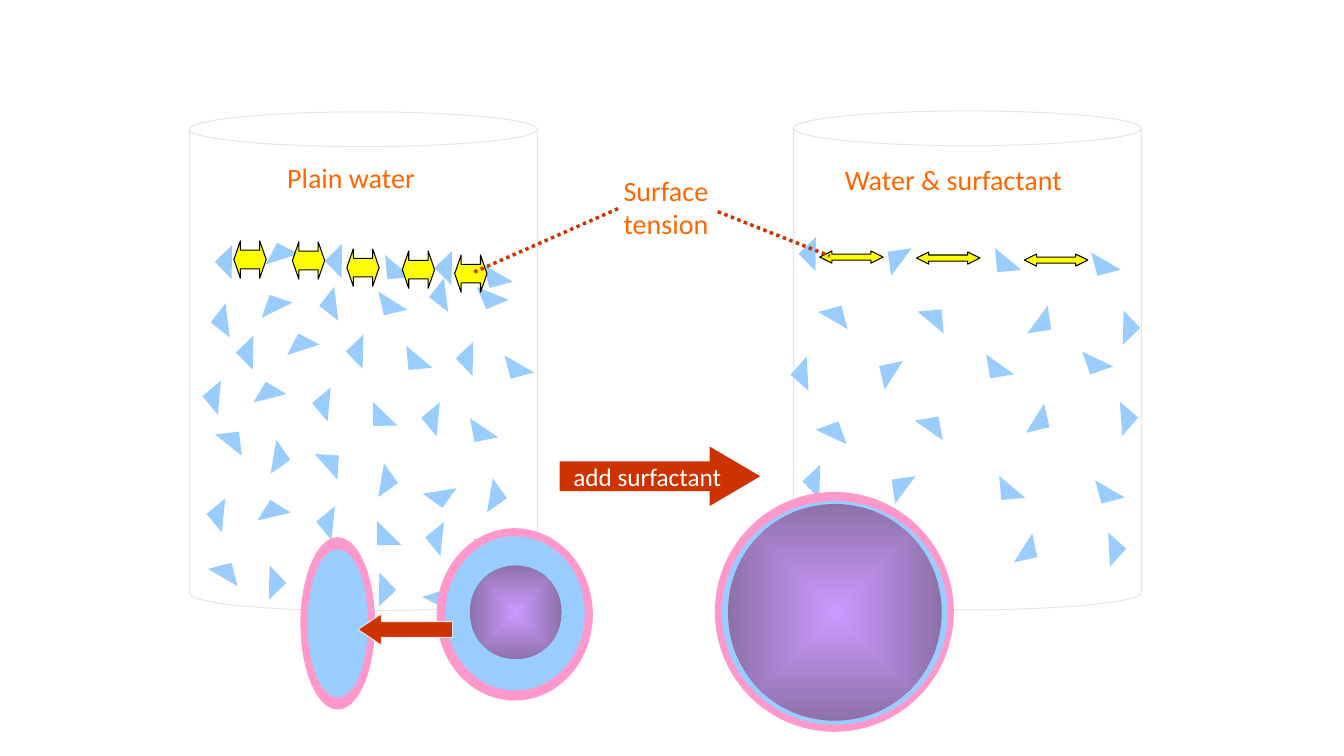
from math import cos, radians, sin

from lxml import etree
from pptx import Presentation
from pptx.dml.color import RGBColor
from pptx.enum.dml import MSO_LINE
from pptx.enum.shapes import MSO_CONNECTOR, MSO_SHAPE
from pptx.enum.text import MSO_ANCHOR, PP_ALIGN
from pptx.oxml.ns import qn
from pptx.util import Inches, Pt

CAN = MSO_SHAPE.CAN
WEDGE = MSO_SHAPE.RIGHT_TRIANGLE
BOTH = MSO_SHAPE.LEFT_RIGHT_ARROW
RIGHT = MSO_SHAPE.RIGHT_ARROW
LEFT = MSO_SHAPE.LEFT_ARROW
OVAL = MSO_SHAPE.OVAL
STRAIGHT = MSO_CONNECTOR.STRAIGHT
DOTS = MSO_LINE.ROUND_DOT
MIDDLE = MSO_ANCHOR.MIDDLE
CENTER = PP_ALIGN.CENTER
START = PP_ALIGN.LEFT

PINK, BLUE, RED = "FF99CC", "99CCFF", "CC3300"
ORANGE, YELLOW, GREY = "FF6600", "FFFF00", "E7E6E6"
BLACK, WHITE = "000000", "FFFFFF"
CORE = ("CC99FF", "8D71A9")
SIDE = 0.24

PLAIN = {
    "label": ("Plain water", 0.87, 0.43, 1.48),
    "row": [(-1.32, -0.04, 46.2), (-0.82, -0.07, 117), (-0.23, -0.05, 46.2),
            (0.33, 0, 354.9), (0.86, 0.02, 46.2), (1.32, 0.07, 345.1)],
    "turns": [(1.74, 1.53, 0), (1.69, 1.92, -8.2), (1.61, 2.97, 4.1),
              (1.95, 2.43, 0), (1.68, 3.57, 188.5), (1.65, 4.15, 4.6),
              (1.65, 4.69, 180)],
    "pulls": [(0.44, 1.28), (1.02, 1.29), (1.56, 1.36), (2.63, 1.42), (2.11, 1.38)],
    "pull": (0.32, 0.37, 0.2),
}
MIXED = {
    "label": ("Water & surfactant", 0.41, 0.46, 2.38),
    "row": [(-1.44, -0.05, 46.2), (-0.59, 0.03, 81.7), (0.47, 0, 354.9),
            (1.44, 0.02, 345.1)],
    "turns": [(1.66, 1.47, 0), (1.83, 2.1, 180), (1.58, 2.55, -4.3),
              (1.81, 3.13, 175), (1.7, 3.73, 0), (1.69, 4.41, 175.7)],
    "pulls": [(0.26, 1.39), (1.22, 1.4), (2.29, 1.42)],
    "pull": (0.63, 0.12, 1.01),
}


def color(code):
    return RGBColor.from_string(code)


def draw(slide, kind, box, fill=None, line=None, adjust=()):
    shape = slide.shapes.add_shape(kind, *map(Inches, box))
    shape.shadow.inherit = False
    for i, value in enumerate(adjust):
        shape.adjustments[i] = value
    if fill:
        shape.fill.solid()
        shape.fill.fore_color.rgb = color(fill)
    else:
        shape.fill.background()
    if line:
        shape.line.color.rgb = color(line)
        shape.line.width = Pt(0.75)
    else:
        shape.line.fill.background()
    return shape


def write(shape, lines, size, code, align):
    frame = shape.text_frame
    frame.word_wrap = False
    frame.text = "\n".join(lines)
    for para in frame.paragraphs:
        para.alignment = align
        para.font.size = Pt(size)
        para.font.name = "Calibri"
        para.font.color.rgb = color(code)


def label(slide, box, lines, align=START):
    text = slide.shapes.add_textbox(*map(Inches, box))
    write(text, lines, 20, ORANGE, align)


def water(slide, left, top, row, turns):
    for x, y, turn in turns:
        c, s = cos(radians(turn)), sin(radians(turn))
        for dx, dy, angle in row:
            mid = left + x + dx * c - dy * s
            level = top + y + dx * s + dy * c
            box = (mid - SIDE / 2, level - SIDE / 2, SIDE, SIDE)
            draw(slide, WEDGE, box, BLUE).rotation = (angle + turn) % 360


def tank(slide, box, plan):
    left, top = box[:2]
    draw(slide, CAN, box, line=GREY, adjust=[0.1])
    water(slide, left, top, plan["row"], plan["turns"])
    wide, high, head = plan["pull"]
    for x, y in plan["pulls"]:
        draw(slide, BOTH, (left + x, top + y, wide, high), YELLOW, BLACK, [0.5, head])
    text, x, y, width = plan["label"]
    label(slide, (left + x, top + y, width, 0.44), [text])


def tension(slide, box):
    left, top = box[:2]
    label(slide, box, ["Surface", "tension"], CENTER)
    ends = [(0.05, 0.4, -1.4, 1.04), (1.04, 0.43, 2.15, 0.87)]
    for x1, y1, x2, y2 in ends:
        spots = (left + x1, top + y1, left + x2, top + y2)
        lead = slide.shapes.add_connector(STRAIGHT, *map(Inches, spots))
        lead.line.color.rgb = color(RED)
        lead.line.width = Pt(2.5)
        lead.line.dash_style = DOTS
        etree.SubElement(lead._element.spPr, qn("a:effectLst"))


def glow(shape):
    shape.fill.gradient()
    for stop, code in zip(shape.fill.gradient_stops, CORE):
        stop.color.rgb = color(code)
    grad = shape._element.spPr.find(qn("a:gradFill"))
    grad.remove(grad.find(qn("a:lin")))
    way = etree.Element(qn("a:path"), path="shape")
    etree.SubElement(way, qn("a:fillToRect"), l="50000", t="50000", r="50000", b="50000")
    grad.find(qn("a:gsLst")).addnext(way)


def drop(slide, outer, inner, core=None):
    draw(slide, OVAL, outer, PINK)
    draw(slide, OVAL, inner, BLUE)
    if core:
        glow(draw(slide, OVAL, core, CORE[0]))


def step(slide, box):
    arrow = draw(slide, RIGHT, box, RED, adjust=[0.5, 0.85])
    write(arrow, ["add surfactant"], 18, WHITE, CENTER)
    arrow.text_frame.vertical_anchor = MIDDLE


def main():
    deck = Presentation()
    deck.slide_width, deck.slide_height = Inches(13.33), Inches(7.5)
    slide = deck.slides.add_slide(deck.slide_layouts[6])
    tank(slide, (1.88, 1.11, 3.45, 4.95), PLAIN)
    tank(slide, (7.87, 1.1, 3.45, 4.95), MIXED)
    step(slide, (5.55, 4.43, 1.99, 0.59))
    tension(slide, (6.08, 1.67, 1.05, 0.77))
    drop(slide, (4.33, 5.24, 1.55, 1.71), (4.42, 5.32, 1.38, 1.53), (4.66, 5.61, 0.91, 0.93))
    drop(slide, (7.09, 4.88, 2.37, 2.38), (7.16, 4.97, 2.24, 2.22), (7.22, 5, 2.12, 2.15))
    drop(slide, (2.98, 5.33, 0.74, 1.71), (3.05, 5.45, 0.6, 1.47))
    draw(slide, LEFT, (3.55, 6.09, 0.94, 0.31), RED, GREY, [0.5, 0.75])
    deck.save("out.pptx")


if __name__ == "__main__":
    main()
